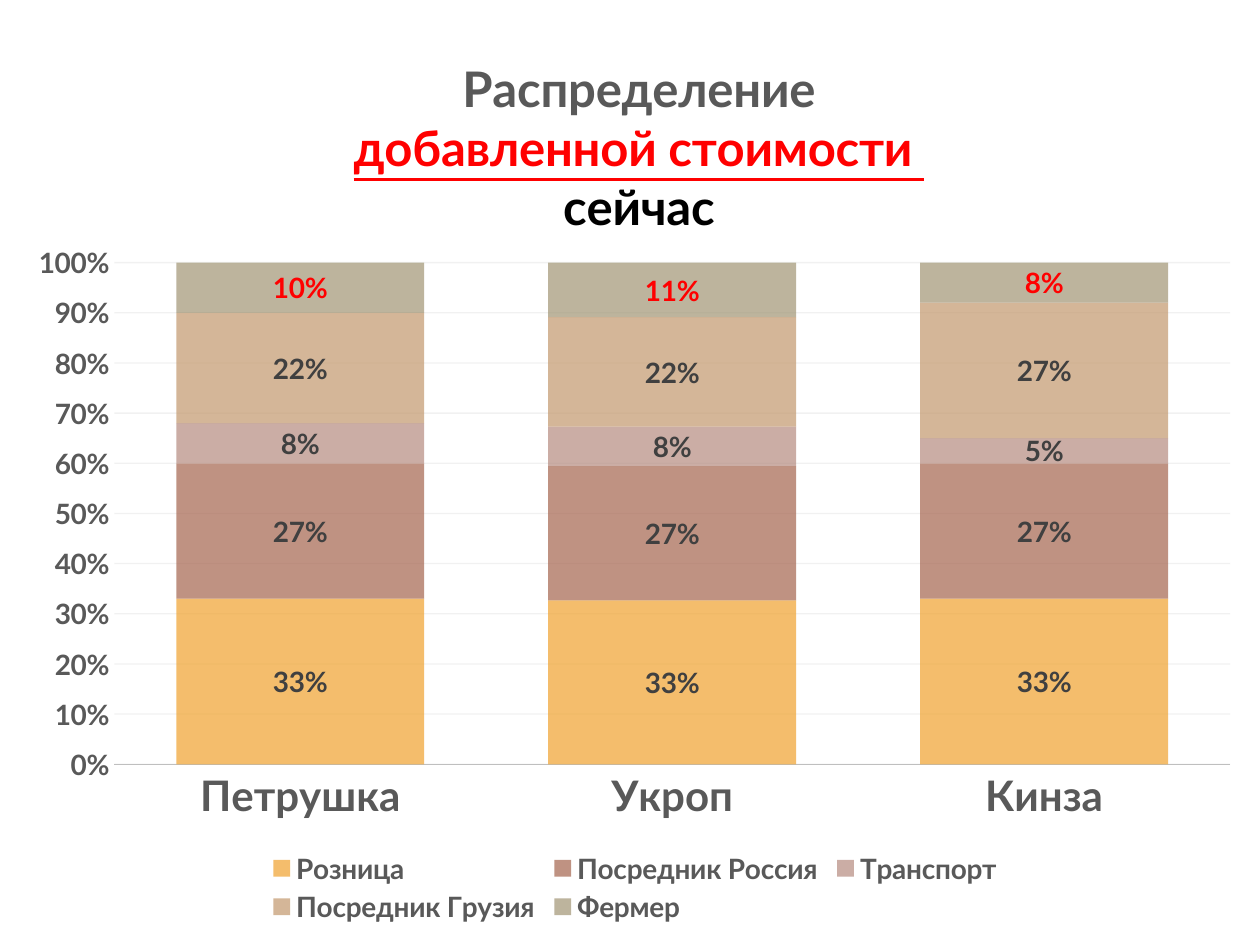
from lxml import etree
from pptx import Presentation
from pptx.chart.data import CategoryChartData
from pptx.dml.color import RGBColor
from pptx.enum.chart import XL_CHART_TYPE, XL_LABEL_POSITION, XL_LEGEND_POSITION, XL_TICK_MARK
from pptx.enum.text import PP_ALIGN
from pptx.oxml.ns import qn
from pptx.util import Pt

STACKED = XL_CHART_TYPE.COLUMN_STACKED_100
BOTTOM = XL_LEGEND_POSITION.BOTTOM
NO_TICK = XL_TICK_MARK.NONE
CENTER_LABEL = XL_LABEL_POSITION.CENTER
CENTER = PP_ALIGN.CENTER

THEME = {
    "font": "Lato",
    "title_size": 28, "category_size": 24, "text_size": 16,
    "text": "595959", "label": "404040", "accent": "FF0000", "dark": "000000",
    "axis": "BFBFBF", "grid": "D9D9D9",
    "series_alpha": 70, "grid_alpha": 35,
}

CATEGORIES = ["Петрушка", "Укроп", "Кинза"]
# name, shares, fill colour, label colour
SERIES = [
    ("Розница", (0.33, 0.33, 0.33), "F0A22E", "label"),
    ("Посредник Россия", (0.27, 0.27, 0.27), "A5644E", "label"),
    ("Транспорт", (0.08, 0.08, 0.05), "B58B80", "label"),
    ("Посредник Грузия", (0.22, 0.22, 0.27), "C3986D", "label"),
    ("Фермер", (0.10, 0.11, 0.08), "A19574", "accent"),
]
# text, colour, underline
TITLE_LINES = [
    ("Распределение", "text", False),
    ("добавленной стоимости ", "accent", True),
    ("сейчас", "dark", False),
]


def format_font(font, size, color, underline=None):
    values = {"name": THEME["font"], "size": Pt(THEME[size]), "bold": True, "underline": underline}
    for attribute, value in values.items():
        setattr(font, attribute, value)
    font.color.rgb = RGBColor.from_string(THEME[color])


def set_alpha(chart_format, percent):
    for color in chart_format._element.iter(qn("a:srgbClr")):
        etree.SubElement(color, qn("a:alpha"), val=str(percent * 1000))


presentation = Presentation()
presentation.slide_width, presentation.slide_height = Pt(720), Pt(540)
slide = presentation.slides.add_slide(presentation.slide_layouts[6])

# Chart
data = CategoryChartData(number_format="0%")
data.categories = CATEGORIES
for name, shares, _, _ in SERIES:
    data.add_series(name, shares)
chart = slide.shapes.add_chart(STACKED, Pt(8.64), Pt(9.36), Pt(708.48), Pt(521.28), data).chart
format_font(chart.font, "text_size", "dark")
plot = chart.plots[0]
plot.gap_width, plot.overlap = 50, 100

# Series and their labels
for series, (_, _, color, label_color) in zip(plot.series, SERIES):
    series.format.fill.solid()
    series.format.fill.fore_color.rgb = RGBColor.from_string(color)
    set_alpha(series.format, THEME["series_alpha"])
    labels = series.data_labels
    label_values = {"show_value": True, "number_format": "0%",
                    "number_format_is_linked": False, "position": CENTER_LABEL}
    for attribute, value in label_values.items():
        setattr(labels, attribute, value)
    format_font(labels.font, "text_size", label_color)

# Axes
category_axis, value_axis = chart.category_axis, chart.value_axis
for axis, size in ((category_axis, "category_size"), (value_axis, "text_size")):
    axis.major_tick_mark = axis.minor_tick_mark = NO_TICK
    format_font(axis.tick_labels.font, size, "text")
value_axis.maximum_scale, value_axis.major_unit = 1, 0.1
value_axis.tick_labels.number_format = "0%"
value_axis.tick_labels.number_format_is_linked = False
value_axis.format.line.fill.background()
gridlines = value_axis.major_gridlines
for line, color in ((category_axis.format.line, "axis"), (gridlines.format.line, "grid")):
    line.width = Pt(0.75)
    line.color.rgb = RGBColor.from_string(THEME[color])
set_alpha(gridlines.format, THEME["grid_alpha"])

# Title
title_frame = chart.chart_title.text_frame
for index, (text, color, underline) in enumerate(TITLE_LINES):
    paragraph = title_frame.add_paragraph() if index else title_frame.paragraphs[0]
    paragraph.alignment = CENTER
    run = paragraph.add_run()
    run.text = text
    format_font(run.font, "title_size", color, underline)
chart.chart_title.include_in_layout = False

# Legend
chart.has_legend = True
chart.legend.position = BOTTOM
chart.legend.include_in_layout = False
format_font(chart.legend.font, "text_size", "text")

# Places of title, plot and legend as shares of the chart
plot_area = chart._chartSpace.find(".//" + qn("c:plotArea"))
for element, place in (
    (chart.chart_title._element, {"x": 0.27, "y": 0.04}),
    (plot_area, {"layoutTarget": "inner", "xMode": "edge", "yMode": "edge",
                 "x": 0.08, "y": 0.27, "w": 0.9, "h": 0.55}),
    (chart.legend._element, {"x": 0.2, "y": 0.91, "w": 0.6, "h": 0.09}),
):
    layout = element.find(qn("c:layout"))
    if layout is None:
        layout = etree.Element(qn("c:layout"))
        element.insert(0, layout)
    manual = etree.SubElement(layout, qn("c:manualLayout"))
    for tag, value in ({"xMode": "edge", "yMode": "edge"} | place).items() if element is not plot_area else place.items():
        etree.SubElement(manual, qn("c:" + tag), val=str(value))

presentation.save("out.pptx")
